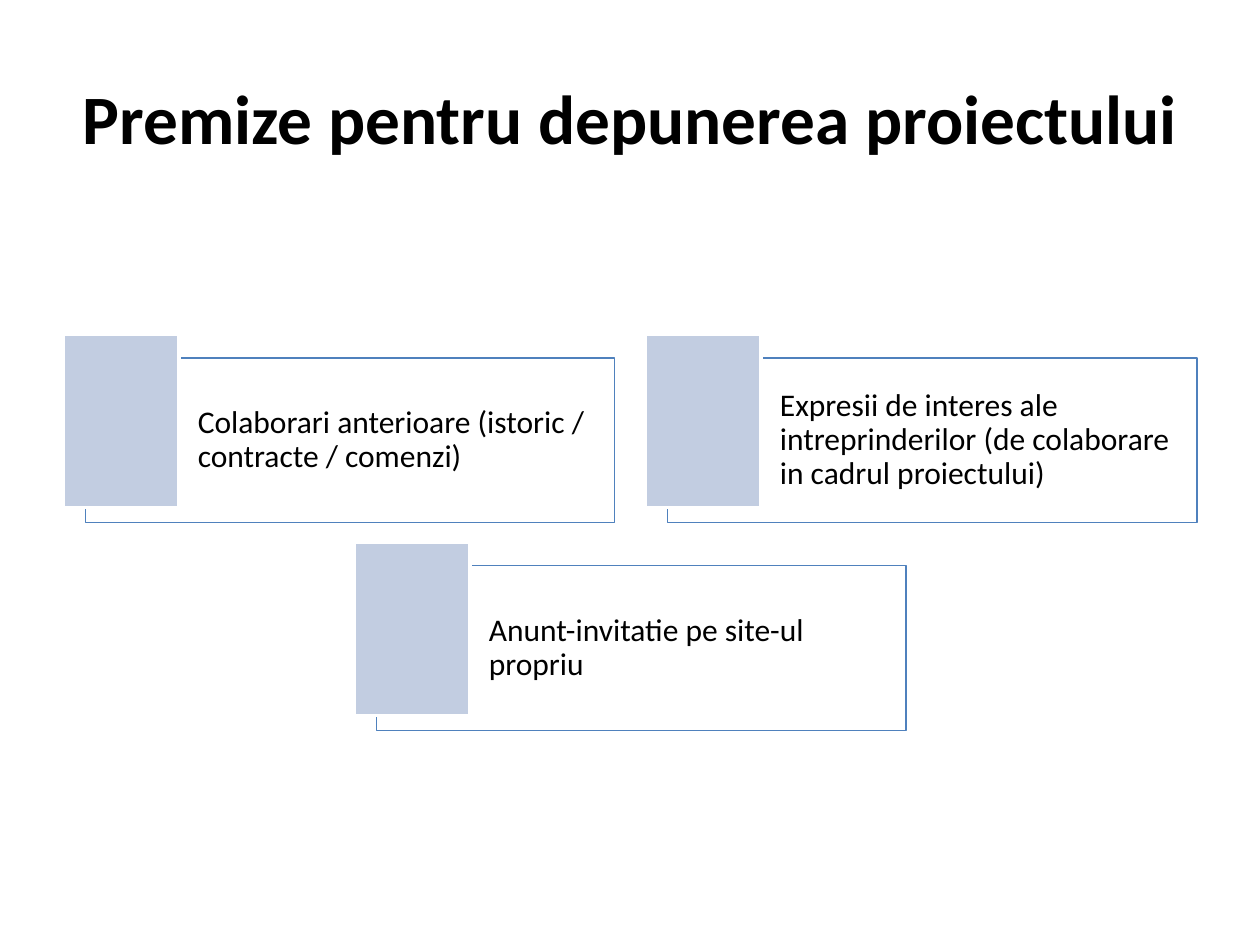
from lxml import etree
from pptx import Presentation
from pptx.dml.color import RGBColor
from pptx.enum import shapes, text
from pptx.oxml.ns import qn
from pptx.util import Inches, Pt

FONT = "Calibri"
CARD_W, CARD_H = 4.38, 1.5
COL_PITCH, ROW_PITCH = 4.62, 1.65
LEFT, TOP = 0.5, 2.65
PREMISES = [
    ["Colaborari anterioare (istoric / contracte / comenzi)",
     "Expresii de interes ale intreprinderilor (de colaborare in cadrul proiectului)"],
    ["Anunt-invitatie pe site-ul propriu"],
]


def color(hex_value):
    return RGBColor.from_string(hex_value)


def add_run(p, words, size, bold=False):
    r = p.add_run()
    r.text = words
    r.font.name, r.font.size, r.font.bold = FONT, Pt(size), bold
    r.font.color.rgb = color("000000")


def add_box(slide, x, y, w, h, fill, line, line_width):
    sp = slide.shapes.add_shape(shapes.MSO_SHAPE.RECTANGLE,
                                Inches(x), Inches(y), Inches(w), Inches(h))
    sp.shadow.inherit = False
    sp.fill.solid()
    sp.fill.fore_color.rgb = color(fill)
    sp.line.color.rgb = color(line)
    sp.line.width = Pt(line_width)
    return sp


def set_opacity(sp, percent):
    rgb = sp.fill._xPr.find(qn("a:solidFill")).find(qn("a:srgbClr"))
    etree.SubElement(rgb, qn("a:alpha")).set("val", str(percent * 1000))


def add_title(slide, x, y, w, h, words):
    title = slide.shapes.title
    title.left, title.top = Inches(x), Inches(y)
    title.width, title.height = Inches(w), Inches(h)
    tf = title.text_frame
    tf.auto_size = text.MSO_AUTO_SIZE.NONE
    tf.vertical_anchor = text.MSO_ANCHOR.MIDDLE
    p = tf.paragraphs[0]
    p.alignment = text.PP_ALIGN.CENTER
    add_run(p, words, 39.6, bold=True)


def add_card(slide, x, y, w, h, words):
    """Outlined panel with a tab overlapping its upper left corner."""
    dx, dy = 0.18, 0.19
    panel = add_box(slide, x + dx, y + dy, w - dx, h - dy, "FFFFFF", "4F81BD", 0.75)
    set_opacity(panel, 40)
    tf = panel.text_frame
    tf.word_wrap = True
    tf.vertical_anchor = text.MSO_ANCHOR.MIDDLE
    tf.margin_left = Inches(0.89)
    tf.margin_top = tf.margin_right = tf.margin_bottom = Inches(0.07)
    p = tf.paragraphs[0]
    p.alignment = text.PP_ALIGN.LEFT
    p.line_spacing = 0.9
    add_run(p, words, 18)
    add_box(slide, x, y, 0.92, h - 0.12, "C2CDE1", "FFFFFF", 2)


def add_cards(slide, x, y, rows):
    """Rows of cards, shorter rows centred under the longest."""
    columns = max(len(row) for row in rows)
    for i, row in enumerate(rows):
        indent = (columns - len(row)) * COL_PITCH / 2
        for j, words in enumerate(row):
            add_card(slide, x + indent + j * COL_PITCH, y + i * ROW_PITCH,
                     CARD_W, CARD_H, words)


def main():
    prs = Presentation()
    prs.slide_width, prs.slide_height = Inches(10), Inches(7.5)
    slide = prs.slides.add_slide(prs.slide_layouts.get_by_name("Title Only"))
    add_title(slide, 0.5, 0.3, 9, 1.25, "Premize pentru depunerea proiectului")
    add_cards(slide, LEFT, TOP, PREMISES)
    prs.save("out.pptx")


if __name__ == "__main__":
    main()
